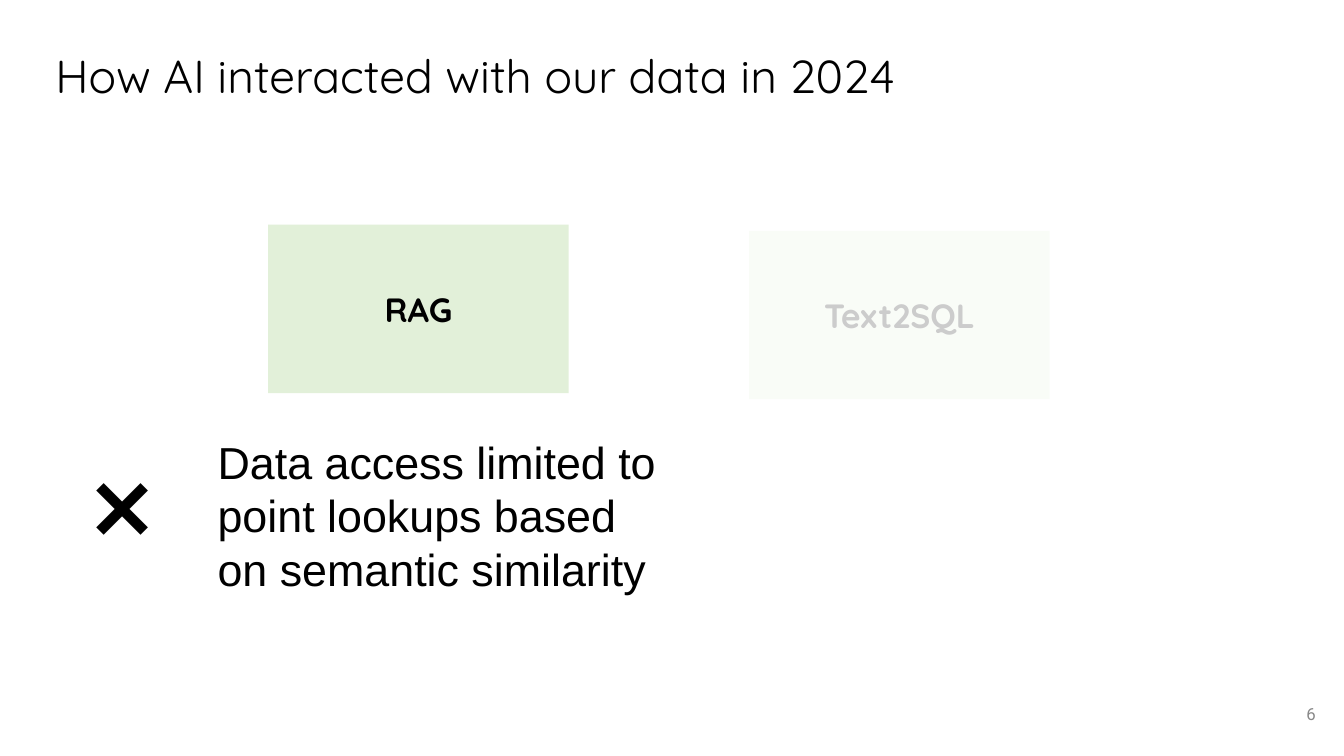
from lxml import etree
from pptx import Presentation
from pptx.dml.color import RGBColor
from pptx.enum.shapes import MSO_SHAPE
from pptx.enum.text import MSO_ANCHOR, PP_ALIGN
from pptx.oxml.ns import qn
from pptx.util import Inches, Pt

RECTANGLE = MSO_SHAPE.RECTANGLE
TOP, MIDDLE = MSO_ANCHOR.TOP, MSO_ANCHOR.MIDDLE
LEFT, CENTER, RIGHT = PP_ALIGN.LEFT, PP_ALIGN.CENTER, PP_ALIGN.RIGHT
COLORS = {"text": "000000", "method": "E2F0D9", "veil": "FFFFFF", "number": "888888"}


def write(shape, text, size, font, color="text", bold=False, align=LEFT,
          anchor=TOP, inset=0.05, spacing=1.0):
    """Write one styled run into a shape."""
    frame = shape.text_frame
    frame.word_wrap = True
    frame.vertical_anchor = anchor
    frame.margin_left = frame.margin_right = Inches(0.1)
    frame.margin_top = frame.margin_bottom = Inches(inset)
    para = frame.paragraphs[0]
    para.alignment = align
    para.line_spacing = spacing
    span = para.add_run()
    span.text = text
    span.font.size = Pt(size)
    span.font.name = font
    span.font.bold = bold
    span.font.color.rgb = RGBColor.from_string(COLORS[color])


def add_text(page, box, text, size, font, **style):
    """Place a text box with one run."""
    write(page.shapes.add_textbox(*map(Inches, box)), text, size, font, **style)


def add_panel(page, box, color):
    """Place a plain filled rectangle and return it."""
    panel = page.shapes.add_shape(RECTANGLE, *map(Inches, box))
    panel.shadow.inherit = False
    panel.fill.solid()
    panel.fill.fore_color.rgb = RGBColor.from_string(COLORS[color])
    panel.line.fill.background()
    return panel


def add_method(page, left, top, name):
    """Place a labelled method block."""
    block = add_panel(page, (left, top, 2.98, 1.67), "method")
    write(block, name, 24, "Quicksand", bold=True, align=CENTER, anchor=MIDDLE)


def add_drawback(page, left, top):
    """Place the cross and the limitation beside it."""
    add_text(page, (left, top + 0.16, 1.2, 1.18), "❌", 64, "Arial")
    add_text(page, (left + 1.24, top, 4.64, 1.72),
             "Data access limited to point lookups based on semantic similarity",
             32, "Arial")


def add_veil(page, box, opacity):
    """Fade a region with a translucent panel."""
    veil = add_panel(page, box, "veil")
    color = veil.fill._xPr.find(qn("a:solidFill"))[0]
    etree.SubElement(color, qn("a:alpha")).set("val", str(opacity * 1000))


def build_slide(page):
    """Place every region of the slide from back to front."""
    add_text(page, (0.45, 0.43, 12.42, 0.84), "How AI interacted with our data in 2024",
             33, "Quicksand", inset=0.1, spacing=0.9)
    add_method(page, 7.43, 2.29, "Text2SQL")
    add_method(page, 2.66, 2.23, "RAG")
    add_drawback(page, 0.82, 4.26)
    add_veil(page, (7.13, 1.87, 6.2, 4.04), 80)
    add_text(page, (12.35, 6.8, 0.8, 0.57), "6", 12, "Roboto", color="number",
             align=RIGHT, anchor=MIDDLE, inset=0.1)


def main():
    """Build and save the deck."""
    deck = Presentation()
    deck.slide_width, deck.slide_height = Inches(13.33), Inches(7.5)
    build_slide(deck.slides.add_slide(deck.slide_layouts[6]))
    deck.save("out.pptx")


if __name__ == "__main__":
    main()
